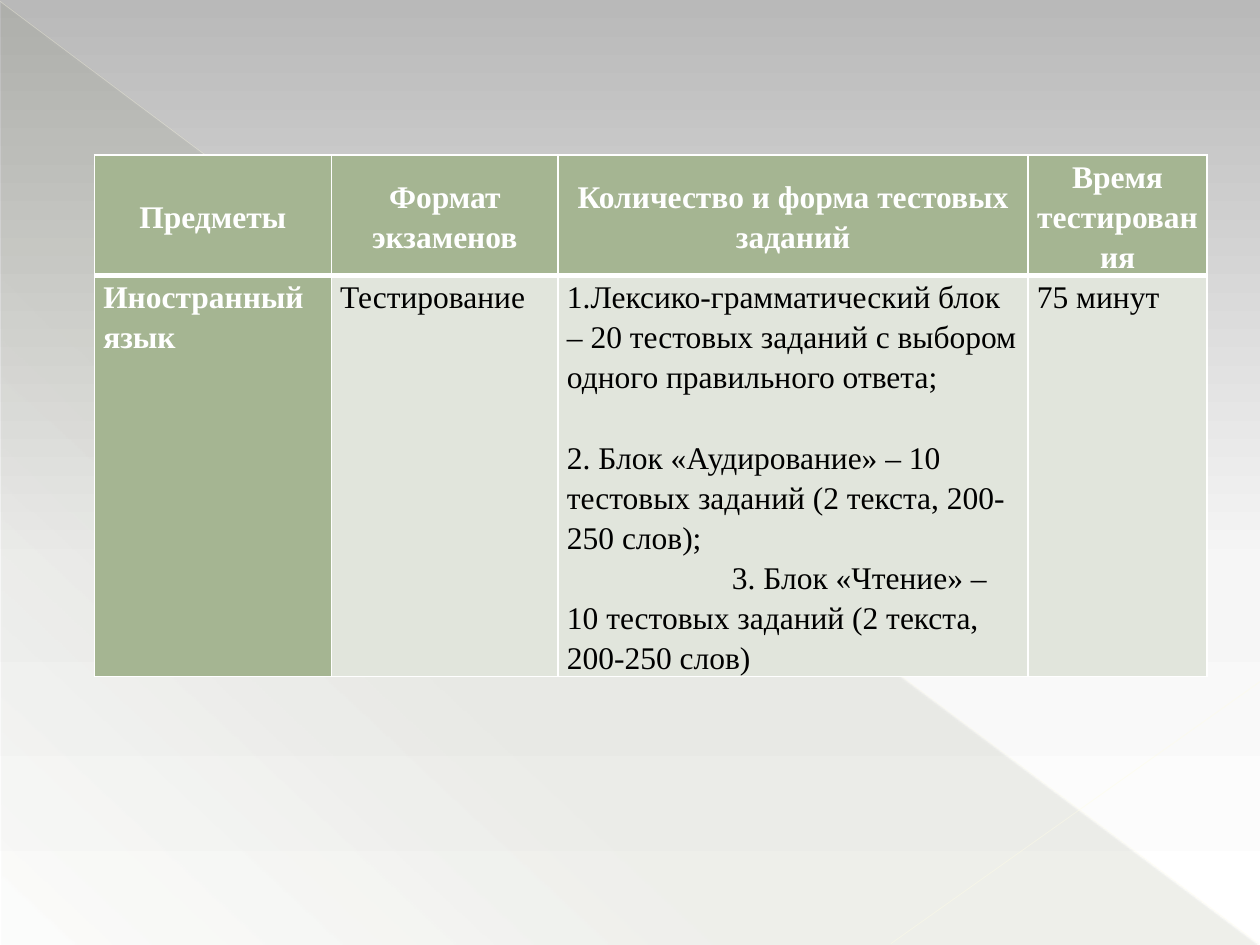
import pptx
import pptx.oxml
import pptx.util
from pptx.dml.color import RGBColor
from pptx.enum.dml import MSO_LINE_DASH_STYLE
from pptx.enum.shapes import MSO_CONNECTOR, MSO_SHAPE
from pptx.enum.text import MSO_ANCHOR, PP_ALIGN
from pptx.oxml.ns import nsdecls, qn

Inches, Pt = pptx.util.Inches, pptx.util.Pt

WHITE = RGBColor(0xFF, 0xFF, 0xFF)
BLACK = RGBColor(0, 0, 0)
GREEN = RGBColor(0xA5, 0xB5, 0x92)
PALE = RGBColor(0xE1, 0xE5, 0xDC)
OLIVE = RGBColor(0x44, 0x4D, 0x26)
CREAM = RGBColor(0xFF, 0xFD, 0xE3)
IVORY = RGBColor(0xFF, 0xFD, 0xE6)

# Content: each cell is a list of paragraphs
ROWS = [
    [["Предметы"], ["Формат экзаменов"],
     ["Количество и форма тестовых заданий"], ["Время тестирования"]],
    [["Иностранный язык"], ["Тестирование"],
     ["1.Лексико-грамматический блок – 20 тестовых заданий с выбором одного правильного ответа;",
      "2. Блок «Аудирование» – 10 тестовых заданий (2 текста, 200-250 слов);",
      "3. Блок «Чтение» – 10 тестовых заданий (2 текста, 200-250 слов)"],
     ["75 минут"]],
]
COL_WIDTHS = [1.88, 1.8, 3.73, 1.42]
ROW_HEIGHTS = [0.95, 3.17]
SPACE_BEFORE = {1: Pt(23)}
FIRST_INDENT = {2: Inches(1.31)}

# Stops: position %, colour, opacity %
SKY = [(0, RGBColor(0xB9, 0xB9, 0xB9), 100),
       (60, RGBColor(0xF6, 0xF6, 0xF6), 100), (100, WHITE, 100)]
SHADE = [(0, OLIVE, 10), (70, OLIVE, 8), (100, OLIVE, 1)]
# Lines: start, end, colour, width, opacity %
LINES = [((0, 0.01), (9.99, 7.49), CREAM, 0.39, 35),
         ((10, 5.41), (7.07, 7.49), IVORY, 0.47, 45)]


def set_gradient(fill, root, stops, angle):
    fill.gradient()
    grad = next(root.iter(qn("a:gradFill")))
    gs = "".join(
        f'<a:gs pos="{pos * 1000}"><a:srgbClr val="{color}">'
        f'<a:alpha val="{alpha * 1000}"/></a:srgbClr></a:gs>'
        for pos, color, alpha in stops)
    grad.getparent().replace(grad, pptx.oxml.parse_xml(
        f'<a:gradFill {nsdecls("a")} rotWithShape="1"><a:gsLst>{gs}</a:gsLst>'
        f'<a:lin ang="{angle * 60000}" scaled="0"/></a:gradFill>'))


def set_borders(cell, widths):
    tcPr = cell._tc.get_or_add_tcPr()
    for side, width in widths.items():
        tcPr.append(pptx.oxml.parse_xml(
            f'<a:ln{side} {nsdecls("a")} w="{Pt(width)}"><a:solidFill>'
            f'<a:srgbClr val="{WHITE}"/></a:solidFill></a:ln{side}>'))


def fill_cell(cell, texts, row, col):
    header, label = row == 0, row == 0 or col == 0
    set_borders(cell, {"L": 1, "R": 1, "T": 1 if header else 3,
                       "B": 3 if header else 1})
    cell.fill.solid()
    cell.fill.fore_color.rgb = GREEN if label else PALE
    layout = {"margin_left": Inches(0.07), "margin_right": Inches(0.07),
              "margin_top": 0, "margin_bottom": 0,
              "vertical_anchor": MSO_ANCHOR.MIDDLE if header else MSO_ANCHOR.TOP}
    for name, value in layout.items():
        setattr(cell, name, value)
    tf = cell.text_frame
    for i, text in enumerate(texts):
        p = tf.add_paragraph() if i else tf.paragraphs[0]
        p.alignment = PP_ALIGN.CENTER if header else PP_ALIGN.LEFT
        p.line_spacing = 1.15
        p.space_before = SPACE_BEFORE.get(i, Pt(0))
        if i in FIRST_INDENT:
            p._p.get_or_add_pPr().set("indent", str(FIRST_INDENT[i]))
        r = p.add_run()
        r.text = text
        for name, value in {"name": "Times New Roman", "size": Pt(18),
                            "bold": label}.items():
            setattr(r.font, name, value)
        r.font.color.rgb = WHITE if label else BLACK


prs = pptx.Presentation()
prs.slide_width, prs.slide_height = Inches(10), Inches(7.5)
s = prs.slides.add_slide(prs.slide_layouts[6])

# Background and shaded triangle
set_gradient(s.background.fill, s._element, SKY, 90)
sp = s.shapes.add_shape(MSO_SHAPE.RIGHT_TRIANGLE, Inches(0.01), Inches(0.02),
                        Inches(9.98), Inches(7.48))
sp.shadow.inherit = False
sp.line.fill.background()
set_gradient(sp.fill, sp._element, SHADE, 133)

# Thin diagonal lines
for start, end, color, width, alpha in LINES:
    line = s.shapes.add_connector(MSO_CONNECTOR.STRAIGHT,
                                  *map(Inches, start + end))
    line.line.width = Pt(width)
    line.line.dash_style = MSO_LINE_DASH_STYLE.SOLID
    line.line.color.rgb = color
    clr = next(line._element.spPr.iter(qn("a:srgbClr")))
    clr.append(pptx.oxml.parse_xml(
        f'<a:alpha {nsdecls("a")} val="{alpha * 1000}"/>'))
    line._element.spPr.append(
        pptx.oxml.parse_xml(f'<a:effectLst {nsdecls("a")}/>'))

# Exam table
table = s.shapes.add_table(len(ROWS), len(COL_WIDTHS), Inches(0.75), Inches(1.23),
                           Inches(sum(COL_WIDTHS)), Inches(sum(ROW_HEIGHTS))).table
for column, width in zip(table.columns, COL_WIDTHS):
    column.width = Inches(width)
for row, height in zip(table.rows, ROW_HEIGHTS):
    row.height = Inches(height)
for i, row in enumerate(ROWS):
    for j, texts in enumerate(row):
        fill_cell(table.cell(i, j), texts, i, j)

prs.save("out.pptx")
